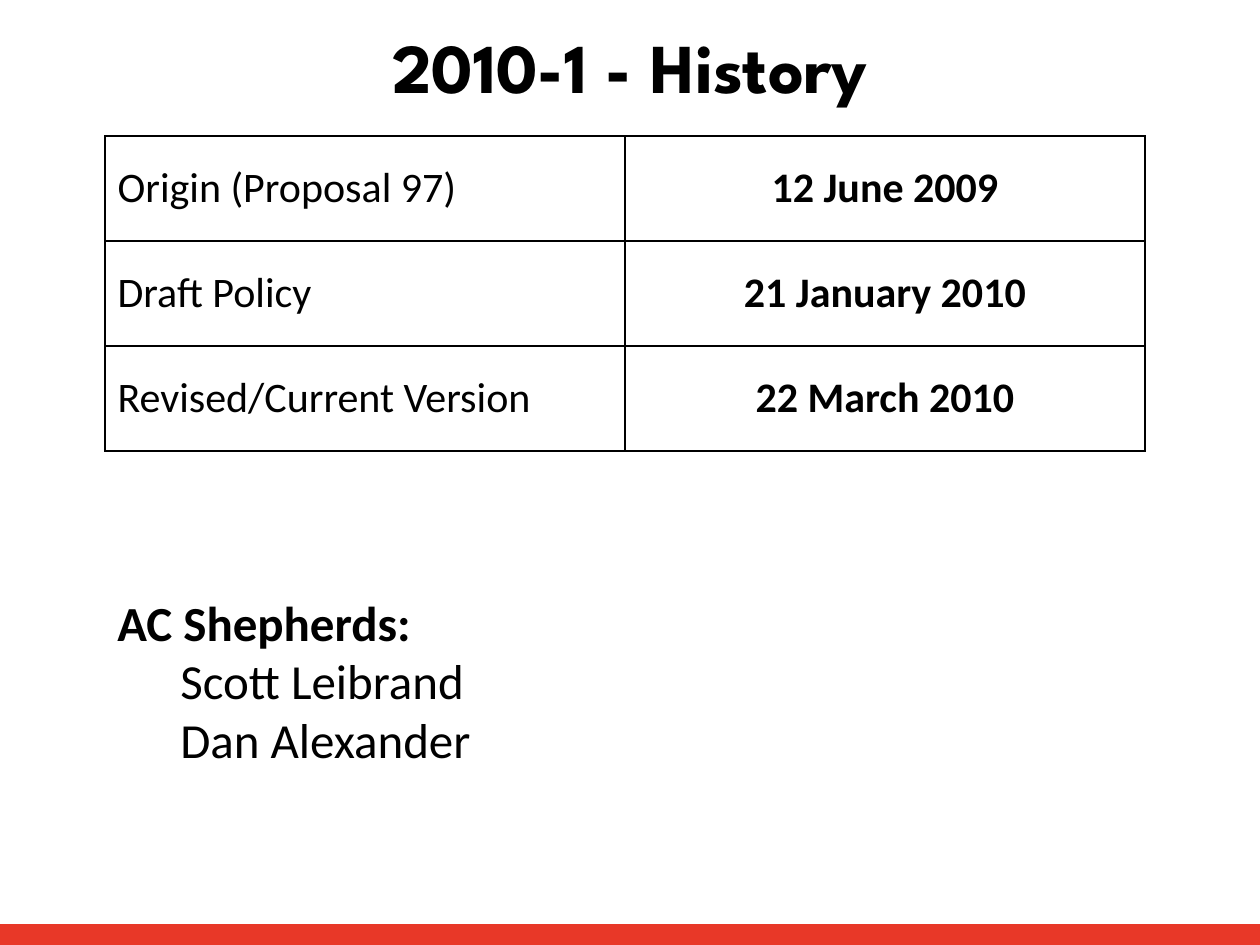
from dataclasses import dataclass

from lxml import etree
from pptx import Presentation
from pptx import util as u
from pptx.dml.color import RGBColor
from pptx.enum import shapes, text
from pptx.oxml import ns


@dataclass(frozen=True)
class Theme:
    ink: str = "000000"
    paper: str = "FFFFFF"
    accent: str = "E83828"
    head: str = "League Spartan"
    body: str = "Calibri"
    title: int = 40
    cell: int = 24
    note: int = 28


class Deck:
    """Draws styled elements on the current slide, in px at 126 to the inch."""

    def __init__(self, theme, wide, high):
        self.theme = theme
        self.prs = Presentation()
        self.prs.slide_width, self.prs.slide_height = self.box(wide, high)
        self.slide = self.prs.slides.add_slide(self.prs.slide_layouts[5])

    def box(self, *sizes):
        return [u.Emu(round(n * 914400 / 126)) for n in sizes]

    def color(self, name):
        return RGBColor.from_string(name)

    def style(self, para, size, face=None, bold=False, align=text.PP_ALIGN.LEFT):
        para.alignment = align
        font = para.font
        font.name, font.size, font.bold = face or self.theme.body, u.Pt(size), bold
        font.color.rgb = self.color(self.theme.ink)

    def title(self, words, *area):
        shape = self.slide.shapes.title
        shape.left, shape.top, shape.width, shape.height = self.box(*area)
        frame = shape.text_frame
        frame.text = words
        frame.vertical_anchor = text.MSO_ANCHOR.MIDDLE
        self.style(frame.paragraphs[0], self.theme.title, self.theme.head, True,
                   text.PP_ALIGN.CENTER)

    def bar(self, *area):
        shape = self.slide.shapes.add_shape(shapes.MSO_SHAPE.RECTANGLE, *self.box(*area))
        shape.shadow.inherit = False
        shape.fill.solid()
        shape.fill.fore_color.rgb = self.color(self.theme.accent)
        shape.line.fill.background()

    def border(self, cell):
        props = cell._tc.get_or_add_tcPr()
        for spot, side in enumerate(("lnL", "lnR", "lnT", "lnB")):
            line = etree.Element(ns.qn(f"a:{side}"), w=str(u.Pt(1)))
            fill = etree.SubElement(line, ns.qn("a:solidFill"))
            etree.SubElement(fill, ns.qn("a:srgbClr"), val=self.theme.ink)
            props.insert(spot, line)

    def table(self, rows, *area):
        grid = self.slide.shapes.add_table(len(rows), len(rows[0]), *self.box(*area)).table
        for r, row in enumerate(rows):
            for c, words in enumerate(row):
                cell = grid.cell(r, c)
                cell.text = words
                cell.vertical_anchor = text.MSO_ANCHOR.MIDDLE
                cell.fill.solid()
                cell.fill.fore_color.rgb = self.color(self.theme.paper)
                align = text.PP_ALIGN.CENTER if c else text.PP_ALIGN.LEFT
                self.style(cell.text_frame.paragraphs[0], self.theme.cell,
                           bold=c > 0, align=align)
                self.border(cell)

    def roster(self, head, names, indent, *area):
        frame = self.slide.shapes.add_textbox(*self.box(*area)).text_frame
        frame.word_wrap = True
        frame.text = "\n".join([head, *names])
        for n, para in enumerate(frame.paragraphs):
            self.style(para, self.theme.note, bold=n == 0)
            if n:
                para._p.get_or_add_pPr().set("marL", str(self.box(indent)[0]))


def main():
    deck = Deck(Theme(), 1260, 945)
    deck.bar(0, 924, 1260, 22)
    deck.table([
        ("Origin (Proposal 97)", "12 June 2009"),
        ("Draft Policy", "21 January 2010"),
        ("Revised/Current Version", "22 March 2010"),
    ], 105, 136, 1040, 315)
    deck.roster("AC Shepherds:", ["Scott Leibrand", "Dan Alexander"], 63,
                105, 586, 514, 190)
    deck.title("2010-1 - History", 63, 16, 1134, 98)
    deck.prs.save("out.pptx")


if __name__ == "__main__":
    main()
